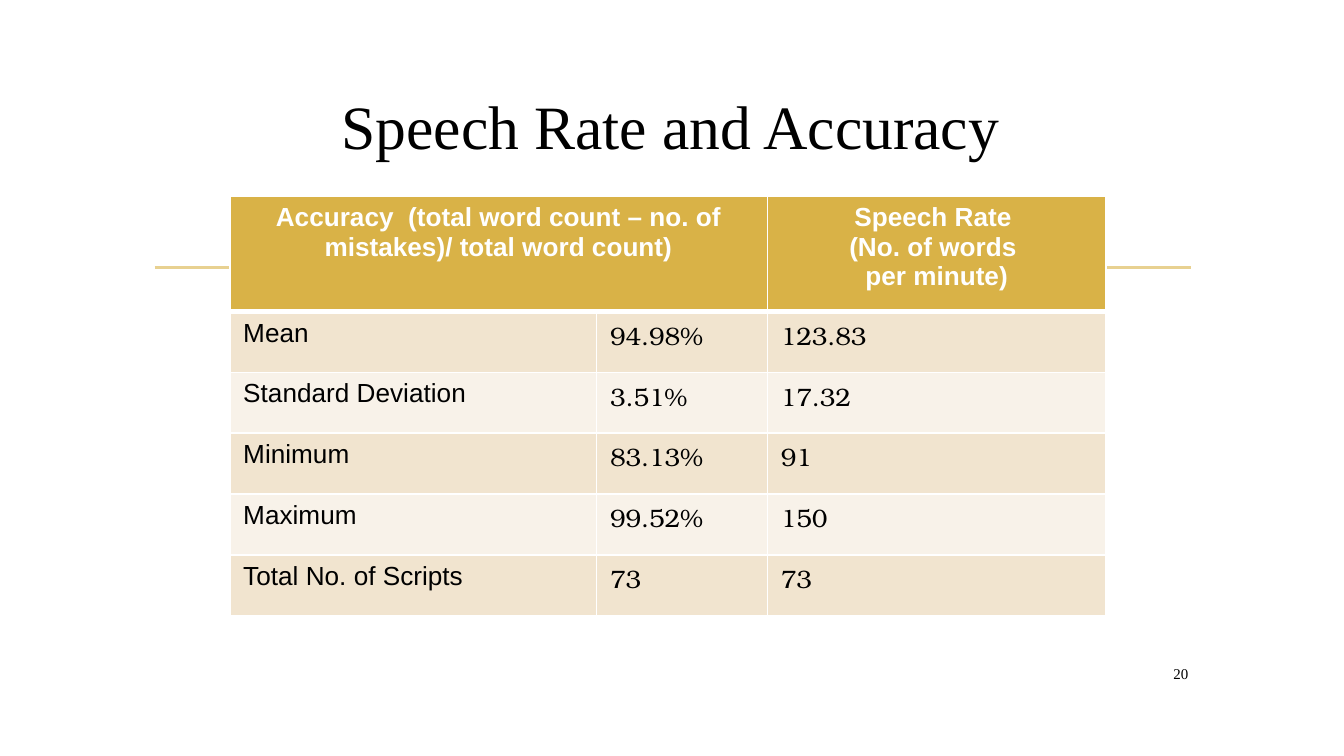
from lxml.etree import SubElement
from pptx import Presentation
from pptx.dml.color import RGBColor
from pptx.enum.shapes import MSO_CONNECTOR
from pptx.enum.text import MSO_ANCHOR, PP_ALIGN
from pptx.oxml.ns import qn
from pptx.util import Inches, Pt

COLORS = {"text": "000000", "white": "FFFFFF", "header": "D9B247",
          "odd": "F1E4CF", "even": "F8F2E9", "rule": "E8D191"}
SERIF, SANS, NUMERIC = "Times New Roman", "Arial", "TeX Gyre Bonum"
COLUMNS = [2.73, 1.27, 2.52]
HEADER_ROW = 0.86
ACCURACY = ["Accuracy  (total word count – no. of mistakes)/ total word count)"]
SPEECH_RATE = ["Speech Rate ", "(No. of words ", "per minute)"]
STATISTICS = [
    ("Mean", "94.98% ", "123.83 "),
    ("Standard Deviation", "3.51% ", "17.32 "),
    ("Minimum", "83.13% ", "91 "),
    ("Maximum", "99.52% ", "150 "),
    ("Total No. of Scripts", "73 ", "73 "),
]


def rgb(name):
    return RGBColor.from_string(COLORS[name])


def write(tf, lines, font, size, color="text", bold=False, align=PP_ALIGN.LEFT):
    tf.word_wrap = True
    for i, line in enumerate(lines):
        p = tf.add_paragraph() if i else tf.paragraphs[0]
        p.alignment = align
        r = p.add_run()
        r.text = line
        r.font.name, r.font.size, r.font.bold = font, Pt(size), bold
        r.font.color.rgb = rgb(color)


def add_title(s, box):
    sp = s.shapes.title
    sp.left, sp.top, sp.width, sp.height = (Inches(v) for v in box)
    sp.text_frame.vertical_anchor = MSO_ANCHOR.MIDDLE
    write(sp.text_frame, ["Speech Rate and Accuracy"], SERIF, 33,
          align=PP_ALIGN.CENTER)


def add_rule(s, left, right, y):
    line = s.shapes.add_connector(MSO_CONNECTOR.STRAIGHT, Inches(left),
                                  Inches(y), Inches(right), Inches(y))
    line.line.color.rgb = rgb("rule")
    line.line.width = Pt(1.25)
    SubElement(line._element.spPr, qn("a:effectLst"))


def style_cell(cell, fill, bottom=1):
    """Draw white borders, with the bottom one in points, then fill the cell."""
    tcPr = cell._tc.get_or_add_tcPr()
    for side, width in (("L", 1), ("R", 1), ("T", 1), ("B", bottom)):
        ln = SubElement(tcPr, qn(f"a:ln{side}"), w=str(Pt(width)))
        solid = SubElement(ln, qn("a:solidFill"))
        SubElement(solid, qn("a:srgbClr"), val=COLORS["white"])
    cell.fill.solid()
    cell.fill.fore_color.rgb = rgb(fill)


def add_statistics(s, left, top, height):
    body_row = (height - HEADER_ROW) / len(STATISTICS)
    heights = [HEADER_ROW] + [body_row] * len(STATISTICS)
    table = s.shapes.add_table(
        len(heights), len(COLUMNS), Inches(left), Inches(top),
        Inches(sum(COLUMNS)), Inches(height)).table
    for column, width in zip(table.columns, COLUMNS):
        column.width = Inches(width)
    for row, row_height in zip(table.rows, heights):
        row.height = Inches(row_height)

    table.cell(0, 0).merge(table.cell(0, 1))
    for c in range(len(COLUMNS)):
        style_cell(table.cell(0, c), "header", bottom=3)
    for c, lines in ((0, ACCURACY), (2, SPEECH_RATE)):
        write(table.cell(0, c).text_frame, lines, SANS, 14, "white", True,
              PP_ALIGN.CENTER)

    for i, values in enumerate(STATISTICS, start=1):
        for c, value in enumerate(values):
            cell = table.cell(i, c)
            style_cell(cell, "odd" if i % 2 else "even")
            font, size = (NUMERIC, 13.5) if c else (SANS, 14)
            write(cell.text_frame, [value], font, size)


def add_slide_number(s, box):
    sp = s.shapes.add_textbox(*(Inches(v) for v in box))
    sp.text_frame.vertical_anchor = MSO_ANCHOR.MIDDLE
    write(sp.text_frame, ["20"], SERIF, 8, align=PP_ALIGN.RIGHT)


def main():
    prs = Presentation()
    prs.slide_width = Inches(10)
    prs.slide_height = prs.slide_width * 9 // 16
    s = prs.slides.add_slide(prs.slide_layouts[5])
    add_rule(s, 1.15, 8.86, 1.99)
    add_title(s, (0.88, 0.4, 8.22, 1.06))
    add_statistics(s, 1.71, 1.46, 3.12)
    add_slide_number(s, (8.49, 4.9, 0.45, 0.23))
    prs.save("out.pptx")


if __name__ == "__main__":
    main()
